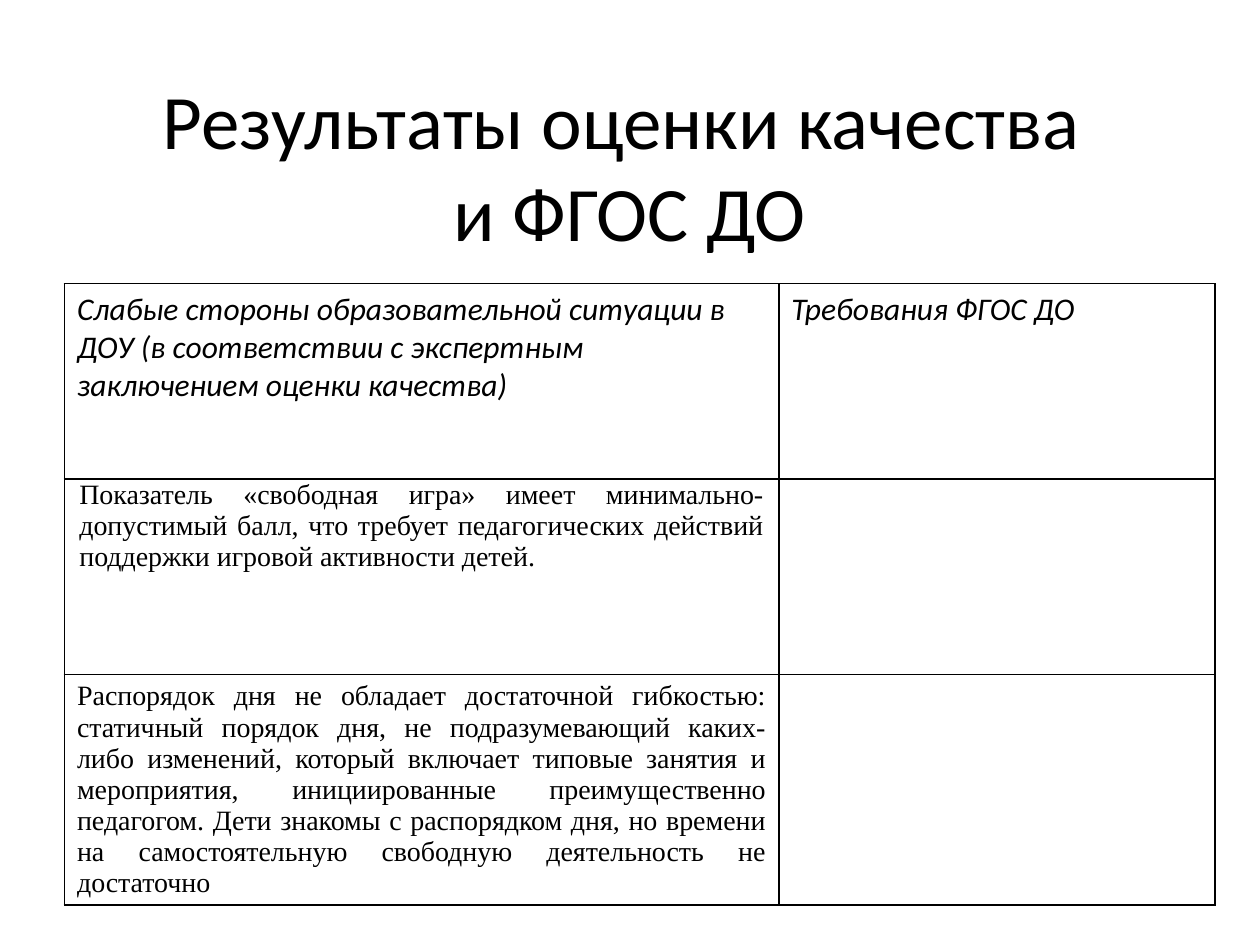
"""Build a slide that sets quality assessment results against the standard's requirements."""
from lxml import etree
from pptx import Presentation
from pptx.dml.color import RGBColor
from pptx.enum.text import MSO_ANCHOR, PP_ALIGN
from pptx.oxml.ns import qn
from pptx.util import Cm, Pt

LEFT, CENTER, JUSTIFY = PP_ALIGN.LEFT, PP_ALIGN.CENTER, PP_ALIGN.JUSTIFY
TOP, MIDDLE = MSO_ANCHOR.TOP, MSO_ANCHOR.MIDDLE

TITLE = "Результаты оценки качества \vи ФГОС ДО"
ROWS = [
    ("Слабые стороны образовательной ситуации в ДОУ (в соответствии с экспертным "
     "заключением оценки качества)",
     "Требования ФГОС ДО"),
    ("Показатель «свободная игра» имеет минимально-допустимый балл, что требует "
     "педагогических действий поддержки игровой активности детей.", ""),
    ("Распорядок дня не обладает достаточной гибкостью: статичный порядок дня, "
     "не подразумевающий каких-либо изменений, который включает типовые занятия "
     "и мероприятия, инициированные преимущественно педагогом. Дети знакомы с "
     "распорядком дня, но времени на самостоятельную свободную деятельность "
     "не достаточно", ""),
]

THEME = {
    "ink": "000000",
    "border": Pt(1),
    "title": {"name": "Calibri", "size": Pt(44)},
    "header": {"name": "Calibri", "size": Pt(18), "italic": True},
    "body": {"name": "Times New Roman", "size": Pt(16), "italic": False},
}
COLUMNS = (Cm(14.4), Cm(8.79))
ROW_HEIGHT = Cm(3.94)
ROW_FORMATS = [
    ("header", {"alignment": LEFT}, {}),
    ("body", {"alignment": JUSTIFY, "space_after": Pt(6)},
     {"margin_left": Cm(0.3), "margin_right": Cm(0.3), "margin_top": 0, "margin_bottom": 0}),
    ("body", {"alignment": JUSTIFY}, {}),
]


def apply(target, values):
    for name, value in values.items():
        setattr(target, name, value)


def style_font(font, role):
    apply(font, THEME[role])
    font.color.rgb = RGBColor.from_string(THEME["ink"])


def add_borders(cell):
    properties = cell._tc.get_or_add_tcPr()
    for position, side in enumerate(("lnL", "lnR", "lnT", "lnB")):
        line = etree.Element(qn(f"a:{side}"), w=str(THEME["border"]))
        fill = etree.SubElement(line, qn("a:solidFill"))
        etree.SubElement(fill, qn("a:srgbClr"), val=THEME["ink"])
        properties.insert(position, line)


def add_title(page):
    box = page.shapes.title
    apply(box, {"left": 0, "top": Cm(0.74), "width": Cm(25.4), "height": Cm(5.16)})
    frame = box.text_frame
    apply(frame, {"text": TITLE, "word_wrap": True, "vertical_anchor": MIDDLE})
    para = frame.paragraphs[0]
    para.alignment = CENTER
    for span in para.runs:
        style_font(span.font, "title")


def add_results(page):
    table = page.shapes.add_table(
        len(ROWS), len(COLUMNS), Cm(1.3), Cm(5.72),
        sum(COLUMNS), ROW_HEIGHT * len(ROWS)).table
    apply(table, {"first_row": False, "horz_banding": False})
    for column, width in zip(table.columns, COLUMNS):
        column.width = width
    for row, texts, (role, para_format, cell_format) in zip(table.rows, ROWS, ROW_FORMATS):
        row.height = ROW_HEIGHT
        for cell, text in zip(row.cells, texts):
            cell.fill.background()
            add_borders(cell)
            apply(cell, {"text": text, "vertical_anchor": TOP, **cell_format})
            para = cell.text_frame.paragraphs[0]
            apply(para, para_format)
            for span in para.runs:
                style_font(span.font, role)


def main():
    deck = Presentation()
    apply(deck, {"slide_width": Cm(25.4), "slide_height": Cm(19.05)})
    page = deck.slides.add_slide(deck.slide_layouts[5])
    add_title(page)
    add_results(page)
    deck.save("out.pptx")


if __name__ == "__main__":
    main()
